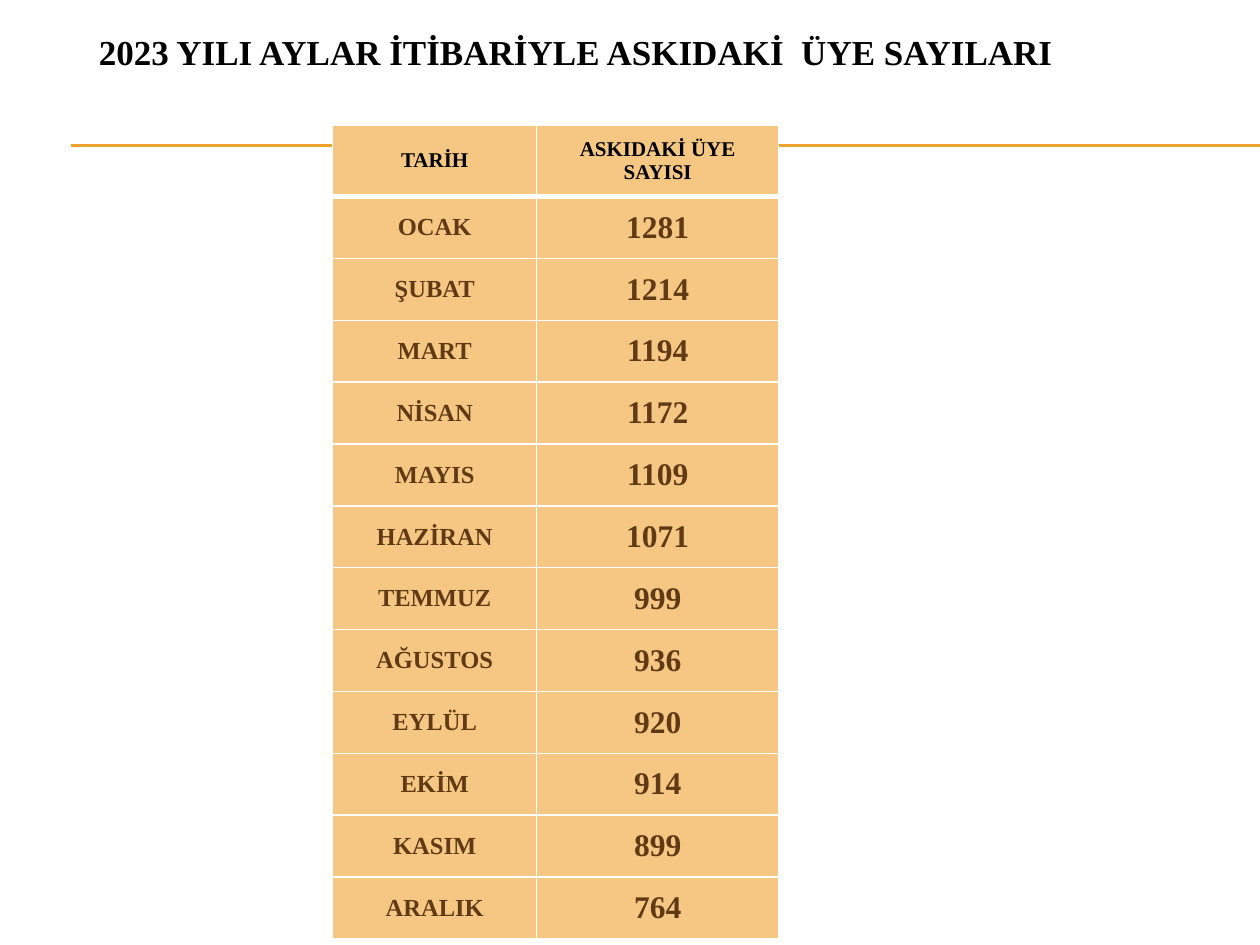
from lxml.etree import SubElement
from pptx import Presentation
from pptx.dml.color import RGBColor
from pptx.enum.shapes import MSO_CONNECTOR
from pptx.enum.text import MSO_ANCHOR, PP_ALIGN
from pptx.oxml.ns import qn
from pptx.util import Inches, Pt

WIDE, HIGH = 10, 7.5
COLS, ROWS = 100, 75
MONTHS = [
    ("OCAK", 1281), ("ŞUBAT", 1214), ("MART", 1194), ("NİSAN", 1172),
    ("MAYIS", 1109), ("HAZİRAN", 1071), ("TEMMUZ", 999), ("AĞUSTOS", 936),
    ("EYLÜL", 920), ("EKİM", 914), ("KASIM", 899), ("ARALIK", 764),
]


def tint(code):
    return RGBColor.from_string(code)


class Deck:
    font = "Times New Roman"
    black, brown = "000000", "603A14"
    gold, sand, white = "F0A22E", "F6C782", "FFFFFF"

    def __init__(self):
        self.prs = Presentation()
        self.prs.slide_width, self.prs.slide_height = Inches(WIDE), Inches(HIGH)
        self.slide = self.prs.slides.add_slide(self.prs.slide_layouts[5])

    def x(self, col):
        return Inches(col * WIDE / COLS)

    def y(self, row):
        return Inches(row * HIGH / ROWS)

    def text(self, frame, words, size, color):
        para = frame.paragraphs[0]
        para.alignment = PP_ALIGN.CENTER
        run = para.add_run()
        run.text = words
        run.font.name, run.font.size, run.font.bold = self.font, Pt(size), True
        run.font.color.rgb = tint(color)

    def title(self, words, col, row, wide, high):
        box = self.slide.shapes.title
        box.left, box.top = self.x(col), self.y(row)
        box.width, box.height = self.x(wide), self.y(high)
        box.text_frame.word_wrap = True
        box.text_frame.vertical_anchor = MSO_ANCHOR.MIDDLE
        self.text(box.text_frame, words, 20, self.black)

    def rule(self, start, end, row):
        line = self.slide.shapes.add_connector(
            MSO_CONNECTOR.STRAIGHT, self.x(start), self.y(row), self.x(end), self.y(row))
        line.line.color.rgb, line.line.width = tint(self.gold), Pt(0.75)
        SubElement(line._element.spPr, qn("a:effectLst"))

    def edge(self, cell, side, width):
        props = cell._tc.get_or_add_tcPr()
        line = SubElement(props, qn("a:ln" + side), w=str(Pt(width)))
        fill = SubElement(line, qn("a:solidFill"))
        SubElement(fill, qn("a:srgbClr"), val=self.white)

    def cell(self, cell, words, size, color, top, base):
        # Borders come before the fill in the cell's XML
        for side, width in (("L", 1), ("R", 1), ("T", top), ("B", base)):
            self.edge(cell, side, width)
        cell.fill.solid()
        cell.fill.fore_color.rgb = tint(self.sand)
        cell.vertical_anchor = MSO_ANCHOR.MIDDLE
        self.text(cell.text_frame, words, size, color)

    def table(self, head, data, col, row, widths, first, rest):
        highs = [first] + [rest] * len(data)
        grid = self.slide.shapes.add_table(
            len(highs), len(widths), self.x(col), self.y(row),
            self.x(sum(widths)), self.y(sum(highs))).table
        grid.horz_banding = False
        for item, wide in zip(grid.columns, widths):
            item.width = self.x(wide)
        for item, high in zip(grid.rows, highs):
            item.height = self.y(high)
        for c, words in enumerate(head):
            self.cell(grid.cell(0, c), words, 12, self.black, 1, 3)
        for r, pair in enumerate(data, 1):
            for c, (value, size) in enumerate(zip(pair, (14, 18))):
                self.cell(grid.cell(r, c), str(value), size, self.brown,
                          3 if r == 1 else 1, 1)


def main():
    deck = Deck()
    # Double gold rule behind the table
    for row in (11.5, 11.6):
        deck.rule(5.6, COLS, row)
    # Monthly figures
    deck.table(("TARİH", "ASKIDAKİ ÜYE SAYISI"), MONTHS,
               26.4, 9.9, (16.2, 19.2), 5.7, 4.91)
    # Heading
    deck.title("2023 YILI AYLAR İTİBARİYLE ASKIDAKİ  ÜYE SAYILARI",
               2.8, 0.5, 85.8, 7.1)
    deck.prs.save("out.pptx")


if __name__ == "__main__":
    main()
